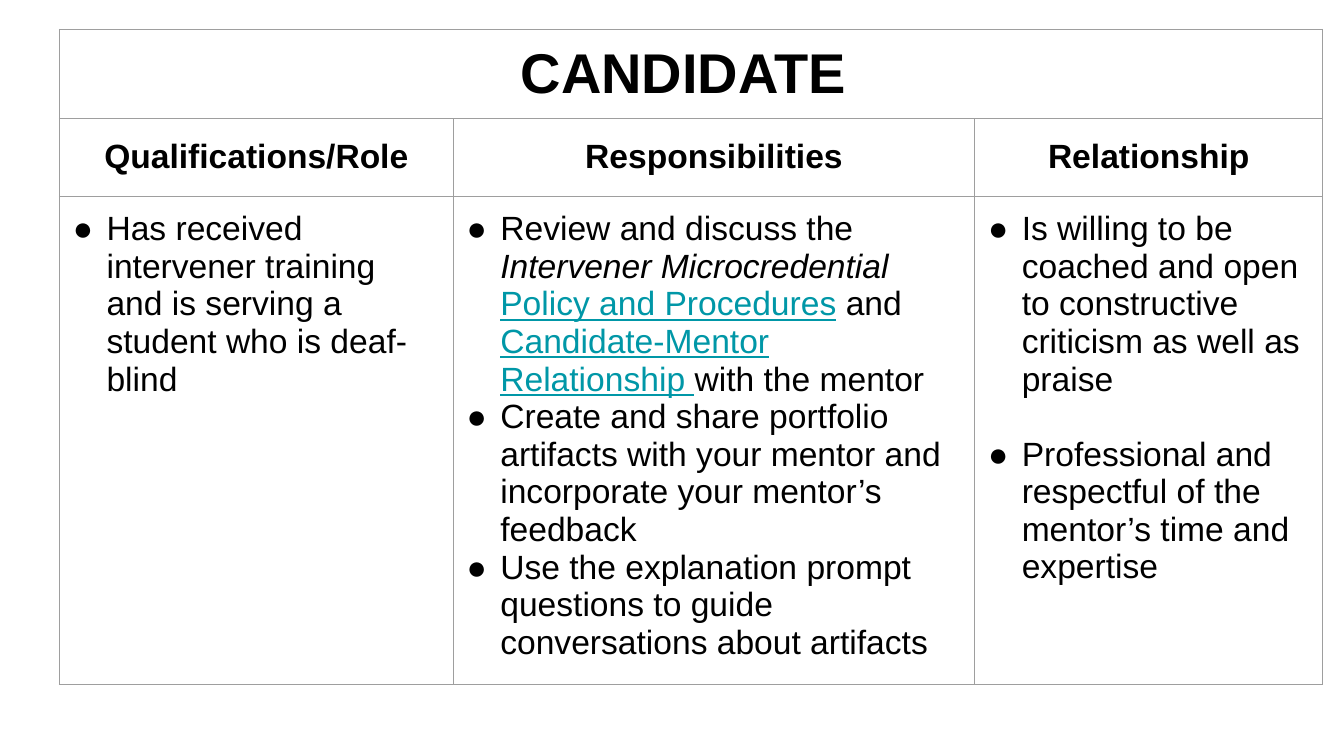
"""Build the candidate slide: one table of qualifications, responsibilities and relationship."""
from lxml import etree
from pptx import Presentation
from pptx import util as u
from pptx.dml import color
from pptx.enum import text
from pptx.oxml import ns

COLORS = {"text": "000000", "link": "0097A7", "border": "9E9E9E", "page": "FFFFFF"}
FONT = "Arial"
COLUMNS = [29.3, 38.8, 25.9]
ROWS = [4.5, 10.3, 64.5]
LEFT, TOP = 4.43, 3.9
HEADINGS = ["Qualifications/Role", "Responsibilities", "Relationship"]
DUTIES = [
    [
        [("Has received intervener training and is serving a student who is deaf-blind", "plain")],
    ],
    [
        [
            ("Review and discuss the ", "plain"),
            ("Intervener Microcredential ", "italic"),
            ("Policy and Procedures", "link"),
            (" and ", "plain"),
            ("Candidate-Mentor Relationship ", "link"),
            ("with the mentor", "plain"),
        ],
        [("Create and share portfolio artifacts with your mentor and incorporate your mentor’s feedback", "plain")],
        [("Use the explanation prompt questions to guide conversations about artifacts", "plain")],
    ],
    [
        [("Is willing to be coached and open to constructive criticism as well as praise", "plain")],
        [("Professional and respectful of the mentor’s time and expertise", "plain")],
    ],
]
PARAGRAPH_GAPS = [0, 0, 20]


def add_span(para, words, style, size=18):
    span = para.add_run()
    span.text = words
    span.font.name = FONT
    span.font.size = u.Pt(size)
    span.font.bold = style == "bold"
    span.font.italic = style == "italic"
    span.font.underline = style == "link"
    span.font.color.rgb = color.RGBColor.from_string(COLORS["link" if style == "link" else "text"])


def add_node(parent, tag, **attributes):
    return etree.SubElement(parent, ns.qn(tag), attributes)


deck = Presentation()
deck.slide_width = u.Inches(10)
deck.slide_height = deck.slide_width * 9 // 16
page = deck.slides.add_slide(deck.slide_layouts[6])
page.background.fill.solid()
page.background.fill.fore_color.rgb = color.RGBColor.from_string(COLORS["page"])
percent_wide, percent_high = deck.slide_width / 100, deck.slide_height / 100

frame = page.shapes.add_table(
    len(ROWS), len(COLUMNS),
    int(LEFT * percent_wide), int(TOP * percent_high),
    int(sum(COLUMNS) * percent_wide), int(sum(ROWS) * percent_high),
)
table = frame.table
table.first_row = table.horz_banding = False
for column, share in zip(table.columns, COLUMNS):
    column.width = int(share * percent_wide)
for row, share in zip(table.rows, ROWS):
    row.height = int(share * percent_high)

for index, row in enumerate(table.rows):
    for cell in row.cells:
        cell.margin_left = cell.margin_right = u.Inches(0.1)
        cell.margin_top = cell.margin_bottom = u.Inches(0.14 if index == 1 else 0.1)
        properties = cell._tc.get_or_add_tcPr()
        for side in ("a:lnL", "a:lnR", "a:lnT", "a:lnB"):
            line = add_node(properties, side, w=str(u.Pt(0.75)))
            add_node(add_node(line, "a:solidFill"), "a:srgbClr", val=COLORS["border"])
        cell.fill.background()

table.cell(0, 0).merge(table.cell(0, len(COLUMNS) - 1))
title = table.cell(0, 0).text_frame.paragraphs[0]
title.alignment = text.PP_ALIGN.CENTER
add_span(title, "CANDIDATE ", "bold", 30)

for column, (heading, duties, gap) in enumerate(zip(HEADINGS, DUTIES, PARAGRAPH_GAPS)):
    para = table.cell(1, column).text_frame.paragraphs[0]
    para.alignment = text.PP_ALIGN.CENTER
    add_span(para, heading, "bold")

    body = table.cell(2, column).text_frame
    for number, duty in enumerate(duties):
        para = body.add_paragraph() if number else body.paragraphs[0]
        para.space_before = u.Pt(gap if number else 0)
        properties = para._p.get_or_add_pPr()
        properties.set("marL", str(u.Inches(0.25)))
        properties.set("indent", str(-u.Inches(0.25)))
        add_node(add_node(properties, "a:buClr"), "a:srgbClr", val=COLORS["text"])
        add_node(properties, "a:buFont", typeface=FONT)
        add_node(properties, "a:buChar", char="●")
        for words, style in duty:
            add_span(para, words, style)

deck.save("out.pptx")
